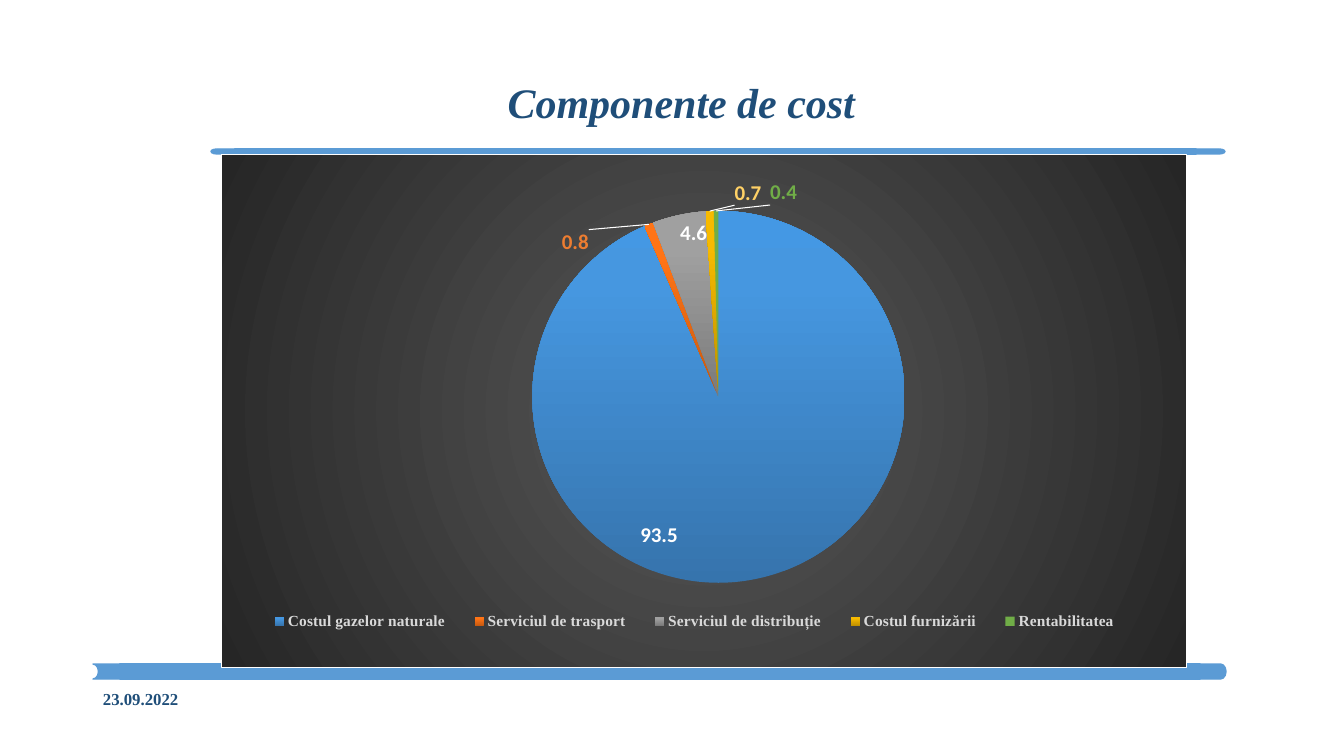
from lxml.etree import SubElement
from pptx import Presentation
from pptx.chart.data import CategoryChartData
from pptx.dml.color import RGBColor
from pptx.enum.chart import XL_CHART_TYPE, XL_LABEL_POSITION, XL_LEGEND_POSITION
from pptx.enum.shapes import MSO_SHAPE
from pptx.enum.text import MSO_ANCHOR, PP_ALIGN
from pptx.oxml import parse_xml
from pptx.oxml.ns import nsdecls, qn
from pptx.util import Emu, Pt

PX_PER_INCH = 100.8
BAND_BLUE = "5B9BD5"
TEXT_BLUE = "1F4E79"
SERIF = "Times New Roman"

# category, value, gradient stops or plain colour, label colour, label offset
COSTS = [
    ("Costul gazelor naturale", 93.5,
     [(0, "3674AD"), (80, "4697E0"), (100, "4498E4")], "FFFFFF", (-0.08, -0.05)),
    ("Serviciul de trasport", 0.8,
     [(0, "C65910"), (80, "FF7416"), (100, "FF7517")], "ED7D31", (-0.06, 0.07)),
    ("Serviciul de distribuție", 4.6,
     [(0, "7B7B7B"), (80, "A0A0A0"), (100, "A1A1A1")], "FFFFFF", None),
    ("Costul furnizării", 0.7,
     [(0, "BE8F00"), (80, "F7BA00"), (100, "F8BB00")], "FFD166", (0.04, 0)),
    ("Rentabilitatea", 0.4, "70AD47", "70AD47", (0.07, 0)),
]
OUTSIDE_BELOW = 1  # slices smaller than this carry their label outside


def px(length):
    return Emu(round(length * 914400 / PX_PER_INCH))


def box(left, top, width, height):
    return px(left), px(top), px(width), px(height)


def rgb(hex_colour):
    return RGBColor.from_string(hex_colour)


def style_font(font, name, size, colour, bold=True, italic=False):
    font.name, font.size = name, Pt(size)
    font.bold, font.italic = bold, italic
    font.color.rgb = rgb(colour)


def add_band_part(slide, kind, bounds, rotation=0):
    part = slide.shapes.add_shape(kind, *box(*bounds))
    part.rotation = rotation
    part.shadow.inherit = False
    part.fill.solid()
    part.fill.fore_color.rgb = rgb(BAND_BLUE)
    part.line.color.rgb = rgb(BAND_BLUE)
    part.line.width = Pt(1)


def add_text(slide, bounds, text, size, align=PP_ALIGN.LEFT, italic=False):
    frame = slide.shapes.add_textbox(*box(*bounds)).text_frame
    frame.word_wrap = True
    frame.vertical_anchor = MSO_ANCHOR.MIDDLE
    paragraph = frame.paragraphs[0]
    paragraph.text = text
    paragraph.alignment = align
    style_font(paragraph.font, SERIF, size, TEXT_BLUE, italic=italic)
    return paragraph


def gradient(stops, direction):
    """Return an a:gradFill with the given stops and direction markup."""
    marks = "".join(
        f'<a:gs pos="{percent * 1000}"><a:srgbClr val="{colour}"/></a:gs>'
        for percent, colour in stops)
    return parse_xml(f'<a:gradFill {nsdecls("a")} rotWithShape="1">'
                     f"<a:gsLst>{marks}</a:gsLst>{direction}</a:gradFill>")


def white_line():
    return parse_xml(f'<a:ln {nsdecls("a")} w="9525"><a:solidFill>'
                     '<a:srgbClr val="FFFFFF"/></a:solidFill></a:ln>')


def manual_layout(inner=False, **values):
    """Return a c:layout; w or h among the values makes x and y absolute."""
    target = '<c:layoutTarget val="inner"/>' if inner else ""
    modes = '<c:xMode val="edge"/><c:yMode val="edge"/>' if "w" in values else ""
    sizes = "".join(f'<c:{key} val="{value}"/>' for key, value in values.items())
    return parse_xml(f'<c:layout {nsdecls("c")}><c:manualLayout>'
                     f"{target}{modes}{sizes}</c:manualLayout></c:layout>")


def set_layout(parent, layout, after=None):
    for old in parent.findall(qn("c:layout")):
        parent.remove(old)
    index = 0 if after is None else parent.index(parent.find(qn(after))) + 1
    parent.insert(index, layout)


def style_slice(point, value, fill, label_colour, offset):
    if isinstance(fill, str):
        point.format.fill.solid()
        point.format.fill.fore_color.rgb = rgb(fill)
    else:
        point.format.fill.background()
        properties = point.format.fill._xPr
        properties.replace(properties.find(qn("a:noFill")),
                           gradient(fill, '<a:lin ang="16200000" scaled="0"/>'))
    if offset is None:
        return
    label = point.data_label
    style_font(label.font, "Calibri", 15, label_colour)
    label.position = (XL_LABEL_POSITION.OUTSIDE_END if value < OUTSIDE_BELOW
                      else XL_LABEL_POSITION.INSIDE_END)
    set_layout(label._get_or_add_dLbl(),
               manual_layout(x=offset[0], y=offset[1]), after="c:idx")


def style_chart_area(chart):
    area = parse_xml(f'<c:spPr {nsdecls("c", "a")}/>')
    area.append(gradient(
        [(0, "595959"), (100, "262626")],
        '<a:path path="circle">'
        '<a:fillToRect l="50000" t="50000" r="50000" b="50000"/></a:path>'))
    area.append(white_line())
    chart._chartSpace.find(qn("c:chart")).addnext(area)


def add_cost_pie(slide, bounds):
    data = CategoryChartData(number_format="0.0")
    data.categories = [cost[0] for cost in COSTS]
    data.add_series("Series 1", [cost[1] for cost in COSTS])
    chart = slide.shapes.add_chart(XL_CHART_TYPE.PIE, *box(*bounds), data).chart
    chart.has_title = False
    style_font(chart.font, "Calibri", 10, "000000", bold=False)
    style_chart_area(chart)

    chart.has_legend = True
    legend = chart.legend
    legend.position = XL_LEGEND_POSITION.BOTTOM
    legend.include_in_layout = False
    style_font(legend.font, SERIF, 11, "D9D9D9")
    set_layout(legend._element, manual_layout(x=0.03, y=0.88, w=0.92, h=0.06),
               after="c:legendPos")
    set_layout(chart._chartSpace.chart.plotArea,
               manual_layout(inner=True, x=0.222, y=0.11, w=0.586, h=0.725))

    plot = chart.plots[0]
    plot.vary_by_categories = True
    series = plot.series[0]
    labels = series.data_labels
    labels.show_value = True
    labels.number_format, labels.number_format_is_linked = "0.0", False
    labels.position = XL_LABEL_POSITION.INSIDE_END
    style_font(labels.font, "Calibri", 15, "FFFFFF")
    leader_switch = labels._element.find(qn("c:showLeaderLines"))
    if leader_switch is None:
        leader_switch = SubElement(labels._element, qn("c:showLeaderLines"))
    leader_switch.set("val", "1")
    leaders = SubElement(labels._element, qn("c:leaderLines"))
    SubElement(leaders, qn("c:spPr")).append(white_line())

    for index, (_, *look) in enumerate(COSTS):
        style_slice(series.points[index], *look)


def main():
    deck = Presentation()
    deck.slide_width, deck.slide_height = px(1344), px(756)
    slide = deck.slides.add_slide(deck.slide_layouts[6])

    for left in (211, 1186):
        add_band_part(slide, MSO_SHAPE.FLOWCHART_TERMINATOR, (left, 149, 39, 5))
    add_band_part(slide, MSO_SHAPE.RECTANGLE, (235, 149, 961, 5))
    for left in (93, 1193):
        add_band_part(slide, MSO_SHAPE.FLOWCHART_STORED_DATA,
                      (left, 664, 33, 15), rotation=180)
    add_band_part(slide, MSO_SHAPE.RECTANGLE, (120, 664, 1080, 15))

    title = add_text(slide, (221, 65, 921, 80), "Componente de cost", 30,
                     PP_ALIGN.CENTER, italic=True)
    title.line_spacing = 0.9
    add_text(slide, (93, 679, 129, 40), "23.09.2022", 12)
    add_cost_pie(slide, (221, 154, 966, 514))
    deck.save("out.pptx")


if __name__ == "__main__":
    main()
